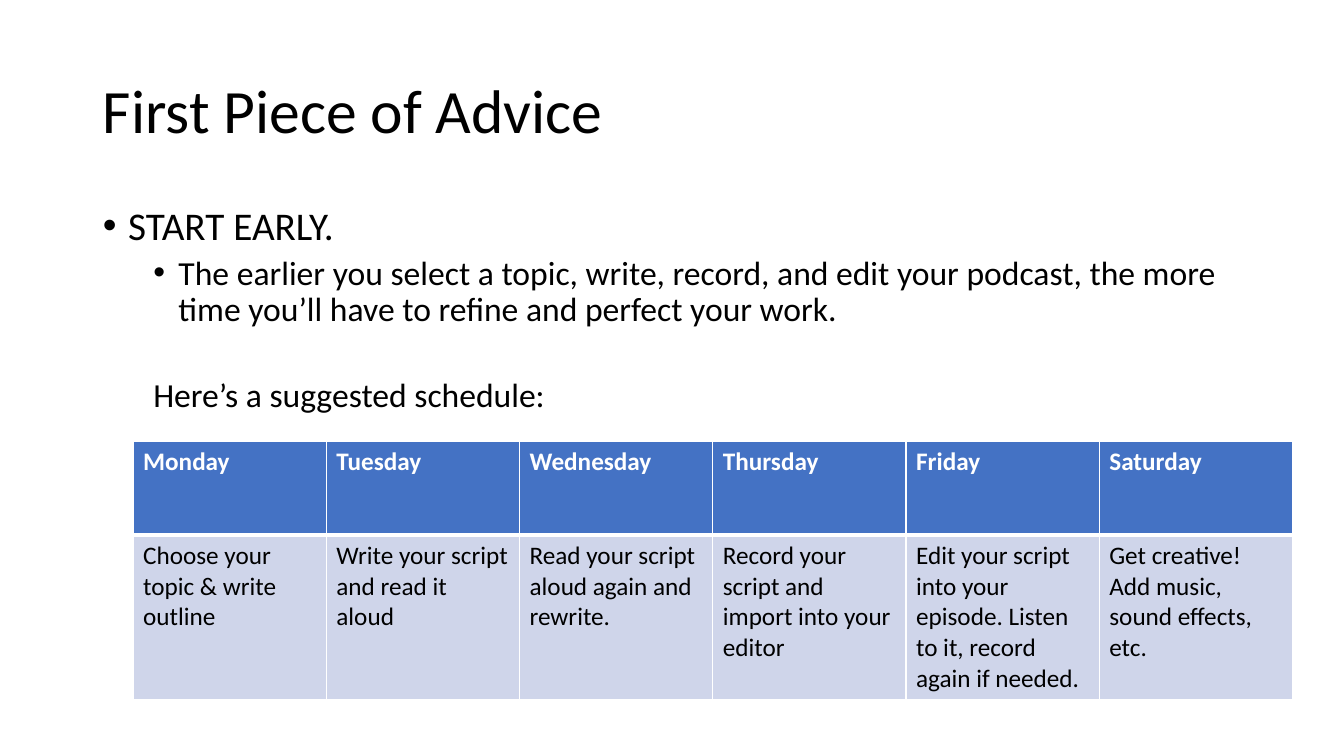
"""Build the podcast advice slide with its suggested weekly schedule."""
from lxml.etree import SubElement as Sub
from pptx import Presentation
from pptx.dml.color import RGBColor as RGB
from pptx.enum.text import MSO_ANCHOR as Anchor, MSO_AUTO_SIZE as Fit, PP_ALIGN as Align
from pptx.oxml.ns import qn
from pptx.util import Inches, Pt


def write(par, text, size=18, color="000000", bold=False, line=1, before=0):
    par.alignment = Align.LEFT
    par.line_spacing = line
    par.space_before = Pt(before)
    run = par.add_run()
    run.text = text
    run.font.name = "Calibri"
    run.font.size = Pt(size)
    run.font.bold = bold
    run.font.color.rgb = RGB.from_string(color)


def edge(cell, sides):
    props = cell._tc.get_or_add_tcPr()
    for side, width in sides.items():
        line = Sub(props, qn(f"a:ln{side}"), w=str(Pt(width)))
        fill = Sub(line, qn("a:solidFill"))
        Sub(fill, qn("a:srgbClr"), val="FFFFFF")


deck = Presentation()
deck.slide_width, deck.slide_height = Inches(13.33), Inches(7.5)
slide = deck.slides.add_slide(deck.slide_layouts[1])

title, body = slide.placeholders
for holder, top, high in [(title, 0.4, 1.45), (body, 2, 4.76)]:
    holder.left, holder.top = Inches(0.92), Inches(top)
    holder.width, holder.height = Inches(11.5), Inches(high)
    holder.text_frame.auto_size = Fit.NONE
title.text_frame.vertical_anchor = Anchor.MIDDLE
write(title.text_frame.paragraphs[0], "First Piece of Advice", size=44, line=0.9)

points = [
    ("START EARLY.", 0, 28, 10, 0.25, "•"),
    ("The earlier you select a topic, write, record, and edit your podcast, "
     "the more time you’ll have to refine and perfect your work.", 1, 24, 5, 0.75, "•"),
    ("Here’s a suggested schedule:", 1, 24, 36, 0.5, None),
]
frame = body.text_frame
for i, (text, level, size, before, left, mark) in enumerate(points):
    par = frame.add_paragraph() if i else frame.paragraphs[0]
    par.level = level
    write(par, text, size=size, line=0.9, before=before)
    props = par._p.get_or_add_pPr()
    props.set("marL", str(Inches(left)))
    props.set("indent", str(Inches(-0.25 if mark else 0)))
    if mark:
        Sub(props, qn("a:buFont"), typeface="Arial")
        Sub(props, qn("a:buChar"), char=mark)
    else:
        Sub(props, qn("a:buNone"))

plan = {
    "Monday": "Choose your topic & write outline",
    "Tuesday": "Write your script and read it aloud",
    "Wednesday": "Read your script aloud again and rewrite.",
    "Thursday": "Record your script and import into your editor",
    "Friday": "Edit your script into your episode. Listen to it, record again if needed.",
    "Saturday": "Get creative! Add music, sound effects, etc.",
}
looks = [("4472C4", "FFFFFF", True, 1, 3), ("CFD5EA", "000000", False, 3, 1)]
table = slide.shapes.add_table(
    2, len(plan), Inches(1.32), Inches(4.38), Inches(11.5), Inches(2.53)).table
table.rows[0].height, table.rows[1].height = Inches(0.93), Inches(1.6)
for col, pair in enumerate(plan.items()):
    for row, text in enumerate(pair):
        fill, color, bold, top, base = looks[row]
        cell = table.cell(row, col)
        edge(cell, {"L": 1, "R": 1, "T": top, "B": base})
        cell.fill.solid()
        cell.fill.fore_color.rgb = RGB.from_string(fill)
        write(cell.text_frame.paragraphs[0], text, color=color, bold=bold)

deck.save("out.pptx")
